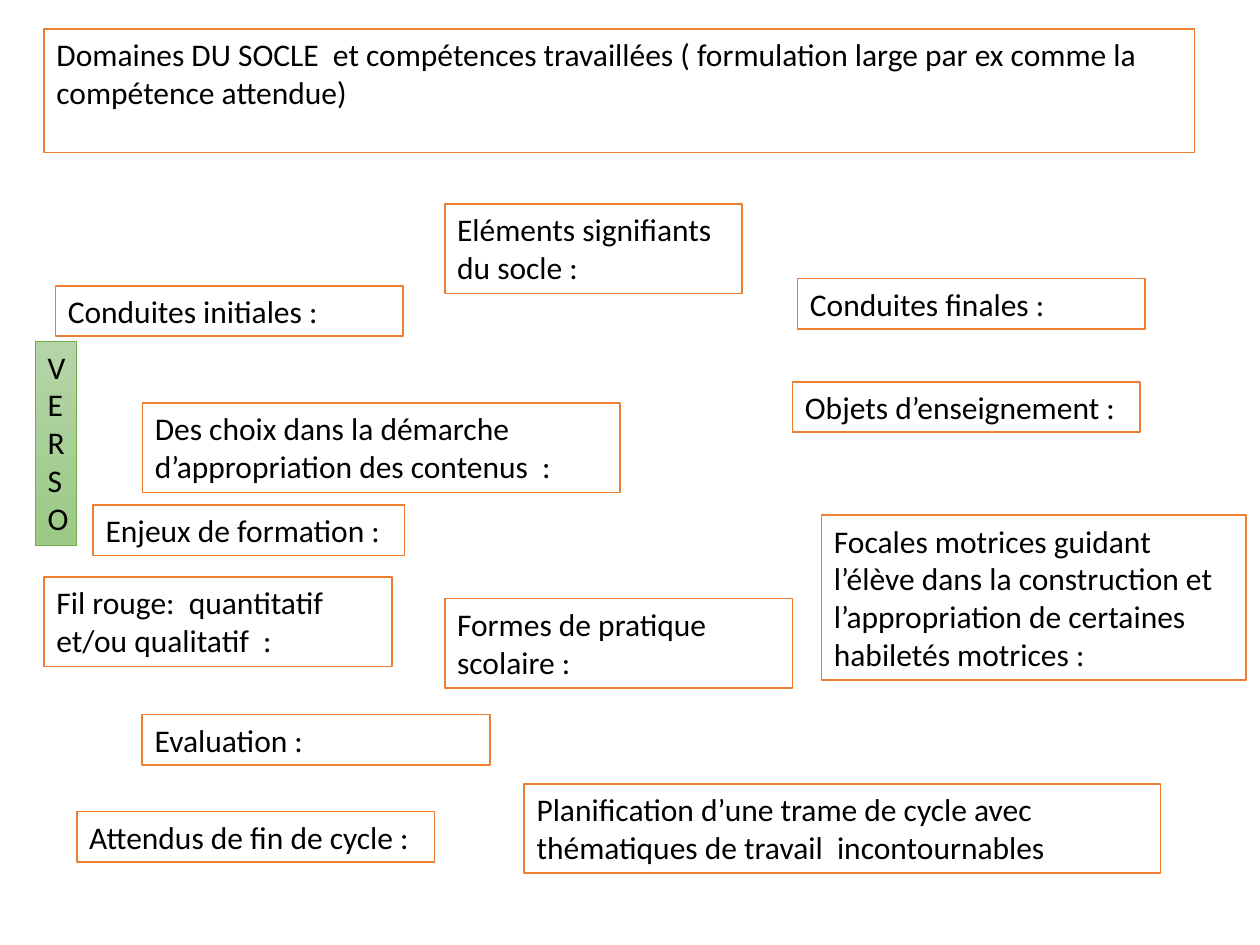
from pptx import Presentation
from pptx.dml.color import RGBColor
from pptx.enum.shapes import MSO_SHAPE as Shape
from pptx.enum.text import MSO_ANCHOR as Anchor, MSO_AUTO_SIZE as AutoSize, PP_ALIGN as Align
from pptx.util import Inches, Pt

BLACK = RGBColor(0x00, 0x00, 0x00)
WHITE = RGBColor(0xFF, 0xFF, 0xFF)
ORANGE = RGBColor(0xED, 0x7D, 0x31)
GREEN = RGBColor(0x70, 0xAD, 0x47)
GREEN_TOP = RGBColor(0xB5, 0xD5, 0xA7)
GREEN_BOTTOM = RGBColor(0x9C, 0xC9, 0x87)

ONE_LINE, TWO_LINES, FOUR_LINES = 0.4, 0.71, 1.31
USUAL_WIDTH = 2.76

# Left, top, width, height, wording
LABELS = [
    (0.35, 0.23, 9.13, 0.98, "Domaines DU SOCLE  et compétences travaillées "
     "( formulation large par ex comme la compétence attendue)"),
    (0.44, 2.27, USUAL_WIDTH, ONE_LINE, "Conduites initiales :"),
    (6.33, 2.21, USUAL_WIDTH, ONE_LINE, "Conduites finales :"),
    (6.29, 3.03, USUAL_WIDTH, ONE_LINE, "Objets d’enseignement :"),
    (0.74, 4.01, 2.47, ONE_LINE, "Enjeux de formation :"),
    (0.61, 6.44, 2.84, ONE_LINE, "Attendus de fin de cycle :"),
    (3.53, 1.62, 2.36, TWO_LINES, "Eléments signifiants du socle :"),
    (3.53, 4.75, USUAL_WIDTH, TWO_LINES, "Formes de pratique scolaire :"),
    (1.13, 5.67, USUAL_WIDTH, ONE_LINE, "Evaluation :"),
    (6.52, 4.09, 3.37, FOUR_LINES, "Focales motrices guidant l’élève dans la construction "
     "et l’appropriation de certaines habiletés motrices :"),
    (0.35, 4.58, USUAL_WIDTH, TWO_LINES, "Fil rouge:  quantitatif et/ou qualitatif  :"),
    (1.13, 3.2, 3.79, TWO_LINES, "Des choix dans la démarche d’appropriation des contenus  :"),
    (4.16, 6.22, 5.05, TWO_LINES, "Planification d’une trame de cycle avec "
     "thématiques de travail  incontournables"),
]


def add_box(page, left, top, width, height, wording, line_color, line_width):
    """Add an outlined rectangle with left-aligned black text."""
    box = page.shapes.add_shape(
        Shape.RECTANGLE, Inches(left), Inches(top), Inches(width), Inches(height))
    box.shadow.inherit = False
    box.line.color.rgb = line_color
    box.line.width = Pt(line_width)
    frame = box.text_frame
    frame.word_wrap = True
    frame.auto_size = AutoSize.NONE
    frame.vertical_anchor = Anchor.TOP
    frame.text = wording
    for para in frame.paragraphs:
        para.alignment = Align.LEFT
        for span in para.runs:
            span.font.name = "Calibri"
            span.font.size = Pt(18)
            span.font.color.rgb = BLACK
    return box


def add_label(page, left, top, width, height, wording):
    box = add_box(page, left, top, width, height, wording, ORANGE, 1)
    box.fill.solid()
    box.fill.fore_color.rgb = WHITE


def add_side_tab(page, left, top, width, height, word):
    """Add a green tab with one letter per paragraph."""
    box = add_box(page, left, top, width, height, "\n".join(word), GREEN, 0.5)
    box.fill.gradient()
    box.fill.gradient_angle = 270
    for stop, color in zip(box.fill.gradient_stops, (GREEN_TOP, GREEN_BOTTOM)):
        stop.color.rgb = color


def main():
    deck = Presentation()
    deck.slide_width, deck.slide_height = Inches(10), Inches(7.5)
    page = deck.slides.add_slide(deck.slide_layouts[6])

    # Headings of the planning sheet
    for label in LABELS:
        add_label(page, *label)

    # Tab on the left edge
    add_side_tab(page, 0.28, 2.71, 0.33, 1.62, "VERSO")

    deck.save("out.pptx")


if __name__ == "__main__":
    main()
